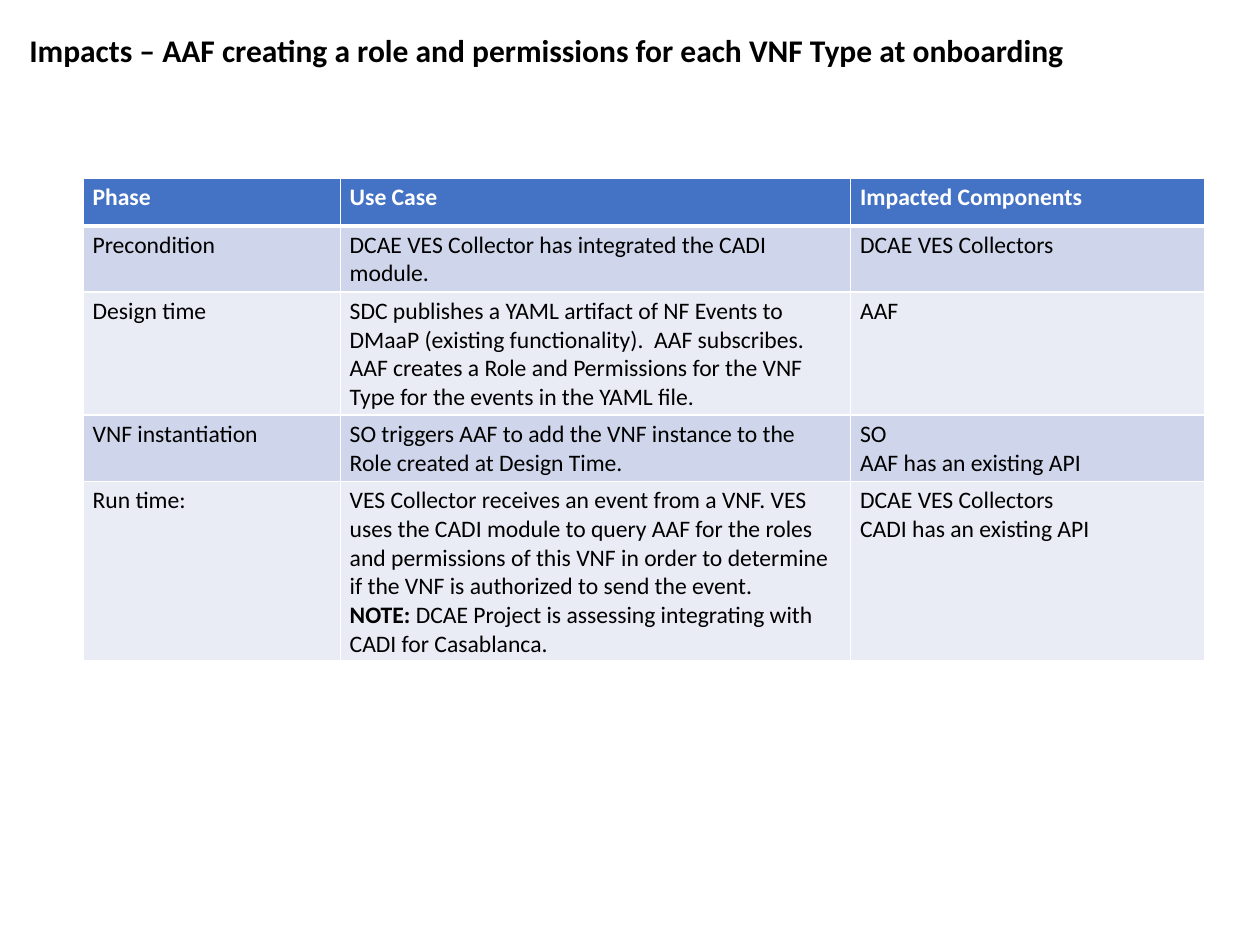
from lxml.etree import SubElement
from pptx import Presentation
from pptx.dml.color import RGBColor
from pptx.enum.text import MSO_ANCHOR, MSO_AUTO_SIZE, PP_ALIGN
from pptx.oxml.ns import qn
from pptx.util import Inches, Pt

FONT = "Calibri"
COLORS = {
    "ink": "000000",
    "white": "FFFFFF",
    "header": "4472C4",
    "odd_row": "CFD5EA",
    "even_row": "E9EBF5",
}
TITLE = "Impacts – AAF creating a role and permissions for each VNF Type at onboarding"
NOTE = "NOTE: "

COLUMN_WIDTHS = [2.72, 5.4, 3.74]
ROW_HEIGHTS = [0.5] + [0.41] * 4
# Each line break inside a cell starts a new paragraph
IMPACTS = [
    ("Phase", "Use Case", "Impacted Components"),
    ("Precondition",
     "DCAE VES Collector has integrated the CADI module.",
     "DCAE VES Collectors"),
    ("Design time",
     "SDC publishes a YAML artifact of NF Events to DMaaP (existing functionality).  "
     "AAF subscribes.  AAF creates a Role and Permissions for the VNF Type "
     "for the events in the YAML file.",
     "AAF"),
    ("VNF instantiation",
     "SO triggers AAF to add the VNF instance to the Role created at Design Time.",
     "SO\nAAF has an existing API"),
    ("Run time:",
     "VES Collector receives an event from a VNF. VES uses the CADI module to query "
     "AAF for the roles and permissions of this VNF in order to determine if the VNF "
     "is authorized to send the event.\n"
     "NOTE: DCAE Project is assessing integrating with CADI for Casablanca.",
     "DCAE VES Collectors\nCADI has an existing API"),
]


def rgb(name):
    return RGBColor.from_string(COLORS[name])


def format_runs(paragraph, size, color, bold):
    for run in paragraph.runs:
        run.font.name = FONT
        run.font.size = Pt(size)
        run.font.color.rgb = rgb(color)
        run.font.bold = bold


def add_title(slide):
    title = slide.shapes.title
    title.left, title.top = Inches(0.21), Inches(0.28)
    title.width, title.height = Inches(12.13), Inches(0.5)
    frame = title.text_frame
    frame.text = TITLE
    frame.word_wrap = True
    frame.auto_size = MSO_AUTO_SIZE.SHAPE_TO_FIT_TEXT
    frame.vertical_anchor = MSO_ANCHOR.TOP
    heading = frame.paragraphs[0]
    heading.alignment = PP_ALIGN.LEFT
    format_runs(heading, 24, "ink", True)


def set_borders(cell, top, bottom):
    properties = cell._tc.get_or_add_tcPr()
    for side, width in (("L", 1), ("R", 1), ("T", top), ("B", bottom)):
        line = SubElement(properties, qn(f"a:ln{side}"), w=str(Pt(width)))
        fill = SubElement(line, qn("a:solidFill"))
        SubElement(fill, qn("a:srgbClr"), val=COLORS["white"])


def fill_cell(cell, text, row):
    is_header = row == 0
    # A thicker rule separates the header from the body
    set_borders(cell, top=3 if row == 1 else 1, bottom=3 if is_header else 1)
    cell.fill.solid()
    band = "odd_row" if row % 2 else "even_row"
    cell.fill.fore_color.rgb = rgb("header" if is_header else band)

    cell.text_frame.text = text
    for paragraph in cell.text_frame.paragraphs:
        has_note = paragraph.text.startswith(NOTE)
        if has_note:
            remark = paragraph.text[len(NOTE):]
            paragraph.text = NOTE
            paragraph.add_run().text = remark
        format_runs(paragraph, 18, "white" if is_header else "ink", is_header)
        if has_note:
            paragraph.runs[0].font.bold = True


def add_impact_table(slide):
    frame = slide.shapes.add_table(
        len(IMPACTS), len(COLUMN_WIDTHS),
        Inches(0.88), Inches(1.89), Inches(11.85), Inches(5.1))
    impacts = frame.table
    for column, width in zip(impacts.columns, COLUMN_WIDTHS):
        column.width = Inches(width)
    for row, height in zip(impacts.rows, ROW_HEIGHTS):
        row.height = Inches(height)
    # The rows grow with their text to this overall height
    frame.height = Inches(5.1)
    for r, texts in enumerate(IMPACTS):
        for c, text in enumerate(texts):
            fill_cell(impacts.cell(r, c), text, r)


def main():
    deck = Presentation()
    deck.slide_width, deck.slide_height = Inches(13.33), Inches(10)
    slide = deck.slides.add_slide(deck.slide_layouts.get_by_name("Title Only"))
    add_impact_table(slide)
    add_title(slide)
    deck.save("out.pptx")


if __name__ == "__main__":
    main()
